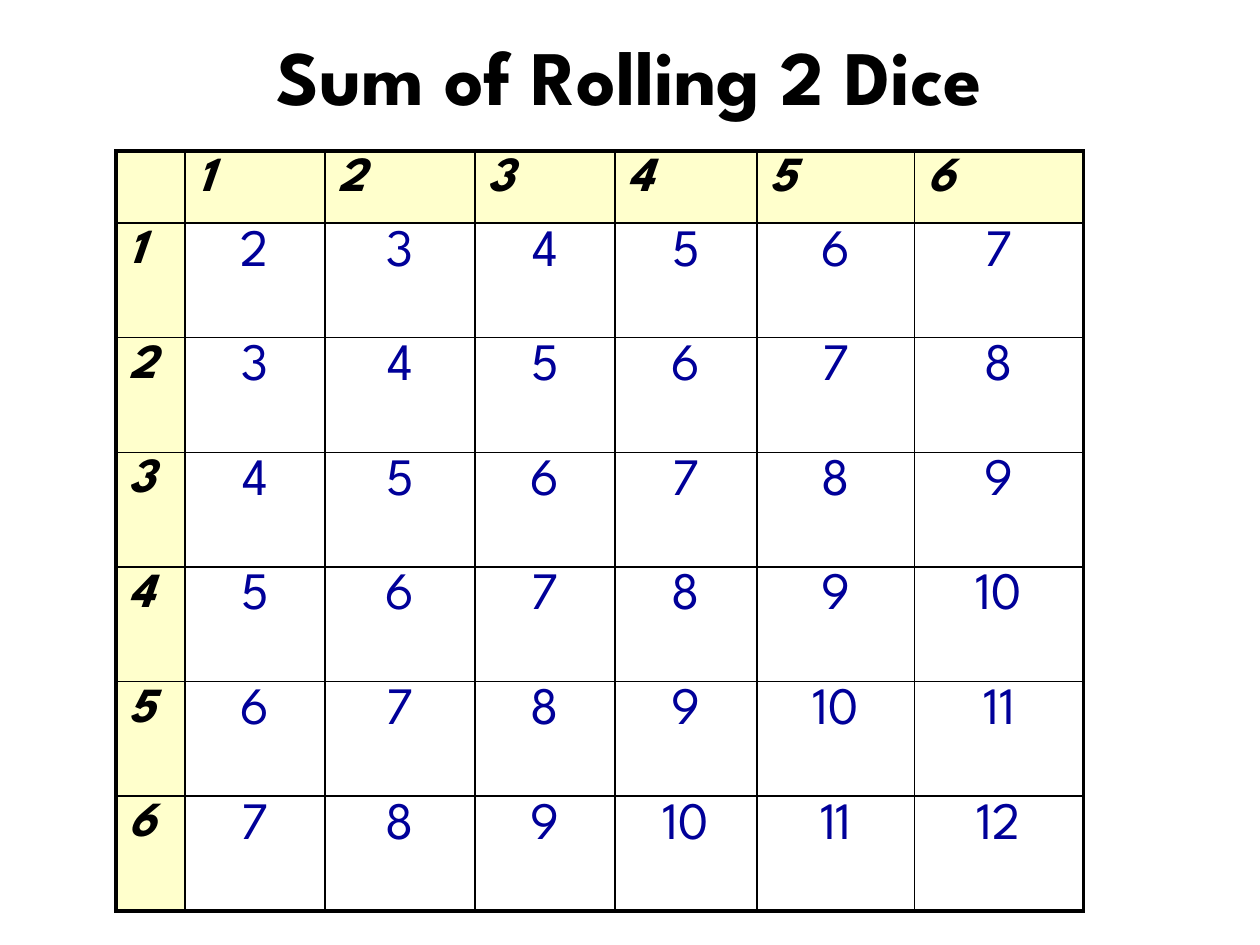
from dataclasses import dataclass

from lxml.etree import SubElement
from pptx import Presentation
from pptx.dml.color import RGBColor
from pptx.enum.text import MSO_ANCHOR, PP_ALIGN
from pptx.oxml.ns import qn
from pptx.util import Inches, Pt


@dataclass(frozen=True)
class Theme:
    font: str = "League Spartan"
    ink: str = "000000"
    sum_color: str = "000099"
    header_fill: str = "FFFFCC"
    title_size: int = 44
    header_size: int = 28
    sum_size: int = 30
    inner_line: float = 1
    outer_line: float = 2.25
    space_before: int = 20  # percent of a line


def write_text(frame, text, *, font, size, color, bold=False, italic=False,
               align=PP_ALIGN.LEFT, space_before=0):
    """Fill a frame's first paragraph; space_before is a percentage."""
    paragraph = frame.paragraphs[0]
    paragraph.alignment = align
    if space_before:
        spacing = SubElement(paragraph._p.get_or_add_pPr(), qn("a:spcBef"))
        SubElement(spacing, qn("a:spcPct"), val=str(space_before * 1000))
    run = paragraph.add_run()
    run.text = text
    run.font.name = font
    run.font.size = Pt(size)
    run.font.bold = bold
    run.font.italic = italic
    run.font.color.rgb = RGBColor.from_string(color)


def set_border(cell, side, width, color):
    line = SubElement(cell._tc.get_or_add_tcPr(), qn(f"a:ln{side}"), w=str(Pt(width)))
    fill = SubElement(line, qn("a:solidFill"))
    SubElement(fill, qn("a:srgbClr"), val=color)


class DiceSlide:
    def __init__(self, presentation, theme):
        self.theme = theme
        self.slide = presentation.slides.add_slide(presentation.slide_layouts[6])

    def add_title(self, text, left, top, width, height):
        title = self.slide.shapes.add_textbox(
            Inches(left), Inches(top), Inches(width), Inches(height))
        frame = title.text_frame
        frame.word_wrap = True
        frame.vertical_anchor = MSO_ANCHOR.MIDDLE
        write_text(frame, text, font=self.theme.font, size=self.theme.title_size,
                   color=self.theme.ink, bold=True, align=PP_ALIGN.CENTER)

    def add_sum_table(self, left, top, widths, heights):
        """Add a table whose first row and column hold the two dice."""
        table = self.slide.shapes.add_table(
            len(heights), len(widths), Inches(left), Inches(top),
            Inches(sum(widths)), Inches(sum(heights))).table
        table.first_row = table.horz_banding = False
        for column, width in zip(table.columns, widths):
            column.width = Inches(width)
        for row, height in zip(table.rows, heights):
            row.height = Inches(height)
        last_row, last_column = len(heights) - 1, len(widths) - 1
        for first_die in range(len(heights)):
            for second_die in range(len(widths)):
                cell = table.cell(first_die, second_die)
                outer_sides = {"L": second_die == 0, "R": second_die == last_column,
                               "T": first_die == 0, "B": first_die == last_row}
                self.style_cell(cell, first_die, second_die, outer_sides)

    def style_cell(self, cell, first_die, second_die, outer_sides):
        theme = self.theme
        for side, is_outer in outer_sides.items():
            width = theme.outer_line if is_outer else theme.inner_line
            set_border(cell, side, width, theme.ink)
        is_header = first_die == 0 or second_die == 0
        if is_header:
            cell.fill.solid()
            cell.fill.fore_color.rgb = RGBColor.from_string(theme.header_fill)
        else:
            cell.fill.background()
        total = first_die + second_die
        if total:
            write_text(cell.text_frame, str(total), font=theme.font,
                       size=theme.header_size if is_header else theme.sum_size,
                       color=theme.ink if is_header else theme.sum_color,
                       bold=is_header, italic=is_header,
                       align=PP_ALIGN.LEFT if is_header else PP_ALIGN.CENTER,
                       space_before=theme.space_before)


def main():
    presentation = Presentation()
    presentation.slide_width = Inches(10)
    presentation.slide_height = Inches(7.5)
    slide = DiceSlide(presentation, Theme())
    slide.add_title("Sum of Rolling 2 Dice", 0.75, -0.03, 8.5, 1.25)
    slide.add_sum_table(0.92, 1.2,
                        widths=[0.55, 1.11, 1.19, 1.11, 1.13, 1.25, 1.34],
                        heights=[0.57] + [0.91] * 6)
    presentation.save("out.pptx")


if __name__ == "__main__":
    main()
